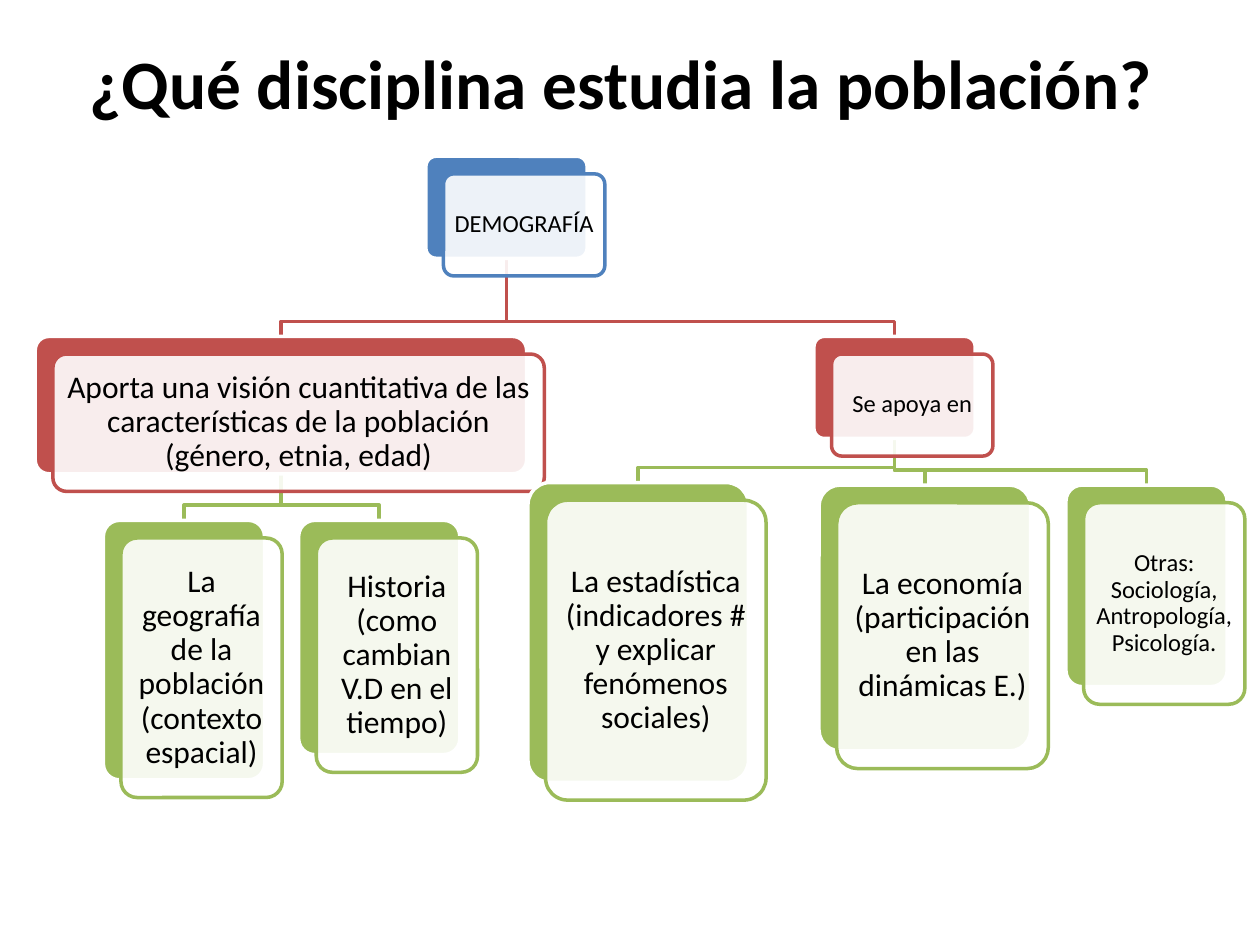
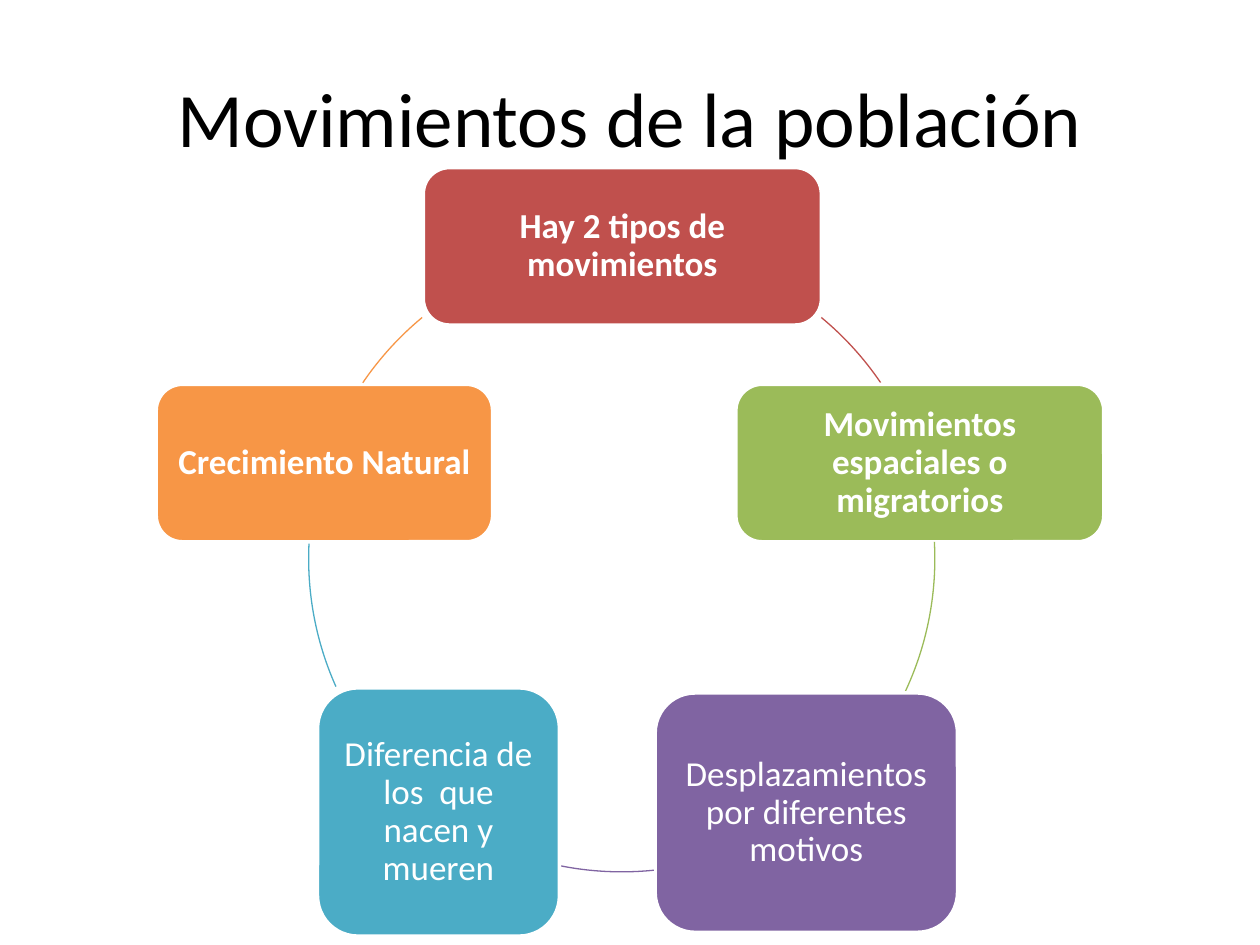
from dataclasses import dataclass

import pptx
import pptx.dml.color
import pptx.enum.shapes
import pptx.enum.text
import pptx.oxml
import pptx.oxml.ns
import pptx.util
from pptx.util import Inches

COLORS = {
    "black": "000000",
    "white": "FFFFFF",
    "blue": "4F81BD",
    "red": "C0504D",
    "green": "9BBB59",
    "purple": "8064A2",
    "teal": "4BACC6",
    "orange": "F79646",
}
FONT = "Calibri"
ROUND_RECT = pptx.enum.shapes.MSO_SHAPE.ROUNDED_RECTANGLE
OUTLINE = 2  # points

# Tree: each card is a solid back plate and a translucent front plate
CARD_SHIFT = 0.14
CARD_ROUNDING = 0.1
CARD_OPACITY = 90
ELBOW_RISE = 0.12
NARROW = 1.28

# Cycle: the arcs share one circle
CIRCLE_LEFT, CIRCLE_TOP, CIRCLE_SIZE = 2.45, 1.95, 4.97


@dataclass(frozen=True)
class Card:
    text: str
    left: float
    top: float
    width: float
    height: float
    color: str
    size: int = 18

    @property
    def center(self) -> float:
        return self.left + self.width / 2


@dataclass(frozen=True)
class Step:
    text: str
    left: float
    top: float
    width: float
    height: float
    color: str
    bold: bool
    arc_start: float  # degrees clockwise from three o'clock
    arc_end: float


def rgb(name: str) -> pptx.dml.color.RGBColor:
    return pptx.dml.color.RGBColor.from_string(COLORS[name])


def write(shape, text: str, size: float, color: str, bold: bool = False) -> None:
    """Centre one paragraph in a shape."""
    frame = shape.text_frame
    frame.word_wrap = True
    frame.vertical_anchor = pptx.enum.text.MSO_ANCHOR.MIDDLE
    paragraph = frame.paragraphs[0]
    paragraph.text = text
    paragraph.alignment = pptx.enum.text.PP_ALIGN.CENTER
    font = paragraph.font
    font.name, font.size, font.bold = FONT, pptx.util.Pt(size), bold
    font.color.rgb = rgb(color)


def write_label(shape, text: str, size: float, color: str, bold: bool = False) -> None:
    """Fill a diagram box with tight text whose margins follow its size."""
    write(shape, text, size, color, bold)
    frame = shape.text_frame
    frame.paragraphs[0].line_spacing = 0.9
    margin = Inches(size / 240)
    frame.margin_left = frame.margin_right = margin
    frame.margin_top = frame.margin_bottom = margin


def add_title(slide, text: str, top: float, height: float, size: float,
              left: float = 0.5, bold: bool = False) -> None:
    title = slide.shapes.add_textbox(
        Inches(left), Inches(top), Inches(9), Inches(height))
    write(title, text, size, "black", bold)


def set_line(shape, color: str, width: float) -> None:
    shape.shadow.inherit = False
    shape.line.color.rgb = rgb(color)
    shape.line.width = pptx.util.Pt(width)


def add_plate(slide, left: float, top: float, width: float, height: float,
              fill: str, line: str):
    plate = slide.shapes.add_shape(
        ROUND_RECT, Inches(left), Inches(top), Inches(width), Inches(height))
    plate.fill.solid()
    plate.fill.fore_color.rgb = rgb(fill)
    set_line(plate, line, OUTLINE)
    return plate


def set_opacity(shape, percent: int) -> None:
    fill_color = shape.fill._xPr.find(
        f"{pptx.oxml.ns.qn('a:solidFill')}/{pptx.oxml.ns.qn('a:srgbClr')}")
    alpha = pptx.oxml.parse_xml(
        f'<a:alpha {pptx.oxml.ns.nsdecls("a")} val="{percent * 1000}"/>')
    fill_color.append(alpha)


def add_card(slide, card: Card) -> None:
    back = add_plate(slide, card.left, card.top, card.width, card.height,
                     card.color, "white")
    front = add_plate(slide, card.left + CARD_SHIFT, card.top + CARD_SHIFT,
                      card.width, card.height, "white", card.color)
    for plate in (back, front):
        plate.adjustments[0] = CARD_ROUNDING
    set_opacity(front, CARD_OPACITY)
    write_label(front, card.text, card.size, "black")


def add_branch(slide, parent: Card, child: Card) -> None:
    """Draw the elbow from the foot of a parent to the head of its child."""
    bend = child.top - ELBOW_RISE
    outline = slide.shapes.build_freeform(
        Inches(parent.center), Inches(parent.top + parent.height))
    corners = [(parent.center, bend), (child.center, bend), (child.center, child.top)]
    outline.add_line_segments(
        [(Inches(x), Inches(y)) for x, y in corners], close=False)
    branch = outline.convert_to_shape()
    branch.fill.background()
    set_line(branch, child.color, OUTLINE)


def add_step(slide, step: Step) -> None:
    plate = add_plate(slide, step.left, step.top, step.width, step.height,
                      step.color, "white")
    write_label(plate, step.text, 20, "white", step.bold)
    arc = slide.shapes.add_shape(
        pptx.enum.shapes.MSO_SHAPE.ARC, Inches(CIRCLE_LEFT), Inches(CIRCLE_TOP),
        Inches(CIRCLE_SIZE), Inches(CIRCLE_SIZE))
    # Angles are stored in 60000ths of a degree, adjustments in 100000ths
    arc.adjustments[0] = step.arc_start * 0.6
    arc.adjustments[1] = step.arc_end * 0.6
    arc.fill.background()
    set_line(arc, step.color, 0.75)


# Content of the tree
DEMOGRAPHY = Card("DEMOGRAFÍA", 3.38, 1.24, NARROW, 0.81, "blue", 14)
VISION = Card("Aporta una visión cuantitativa de las características de la población "
              "(género, etnia, edad)", 0.28, 2.67, 3.9, 1.09, "red")
GEOGRAPHY = Card("La geografía de la población (contexto espacial)",
                 0.82, 4.13, NARROW, 2.06, "green")
HISTORY = Card("Historia (como cambian V.D en el tiempo)",
               2.37, 4.13, NARROW, 1.86, "green")
SUPPORT = Card("Se apoya en", 6.46, 2.67, NARROW, 0.81, "red", 14)
STATISTICS = Card("La estadística (indicadores # y explicar fenómenos sociales)",
                  4.19, 3.83, 1.75, 2.38, "green")
ECONOMY = Card("La economía (participación en las dinámicas E.)",
               6.5, 3.85, 1.68, 2.11, "green")
OTHERS = Card("Otras: Sociología, Antropología, Psicología.",
              8.46, 3.85, NARROW, 1.6, "green", 14)
CARDS = [DEMOGRAPHY, VISION, GEOGRAPHY, HISTORY, SUPPORT, STATISTICS, ECONOMY, OTHERS]
CHILDREN = [
    (SUPPORT, [OTHERS, ECONOMY, STATISTICS]),
    (VISION, [HISTORY, GEOGRAPHY]),
    (DEMOGRAPHY, [SUPPORT, VISION]),
]

# Content of the cycle, clockwise from the top
STEPS = [
    Step("Hay 2 tipos de movimientos", 3.36, 1.33, 3.16, 1.25, "red", True, 309.6, 325.8),
    Step("Movimientos espaciales o migratorios", 5.84, 3.05, 2.92, 1.25,
         "green", True, 356.9, 25.1),
    Step("Desplazamientos por diferentes motivos", 5.2, 5.5, 2.4, 1.9,
         "purple", False, 84.1, 101.5),
    Step("Diferencia de los  que nacen y mueren", 2.52, 5.46, 1.92, 1.97,
         "teal", False, 155.9, 183.1),
    Step("Crecimiento Natural", 1.24, 3.05, 2.67, 1.25, "orange", True, 214.2, 230.4),
]


def build_discipline_slide(slide) -> None:
    add_title(slide, "¿Qué disciplina estudia la población?", 0.29, 0.71, 39.6,
              left=0.43, bold=True)
    for parent, children in CHILDREN:
        for child in children:
            add_branch(slide, parent, child)
    for card in CARDS:
        add_card(slide, card)


def build_movements_slide(slide) -> None:
    add_title(slide, "Movimientos de la población", 0.3, 1.25, 44)
    for step in STEPS:
        add_step(slide, step)


def main() -> None:
    deck = pptx.Presentation()
    deck.slide_width, deck.slide_height = Inches(10), Inches(7.5)
    blank = deck.slide_layouts[6]
    for build in (build_discipline_slide, build_movements_slide):
        build(deck.slides.add_slide(blank))
    deck.save("out.pptx")


if __name__ == "__main__":
    main()
